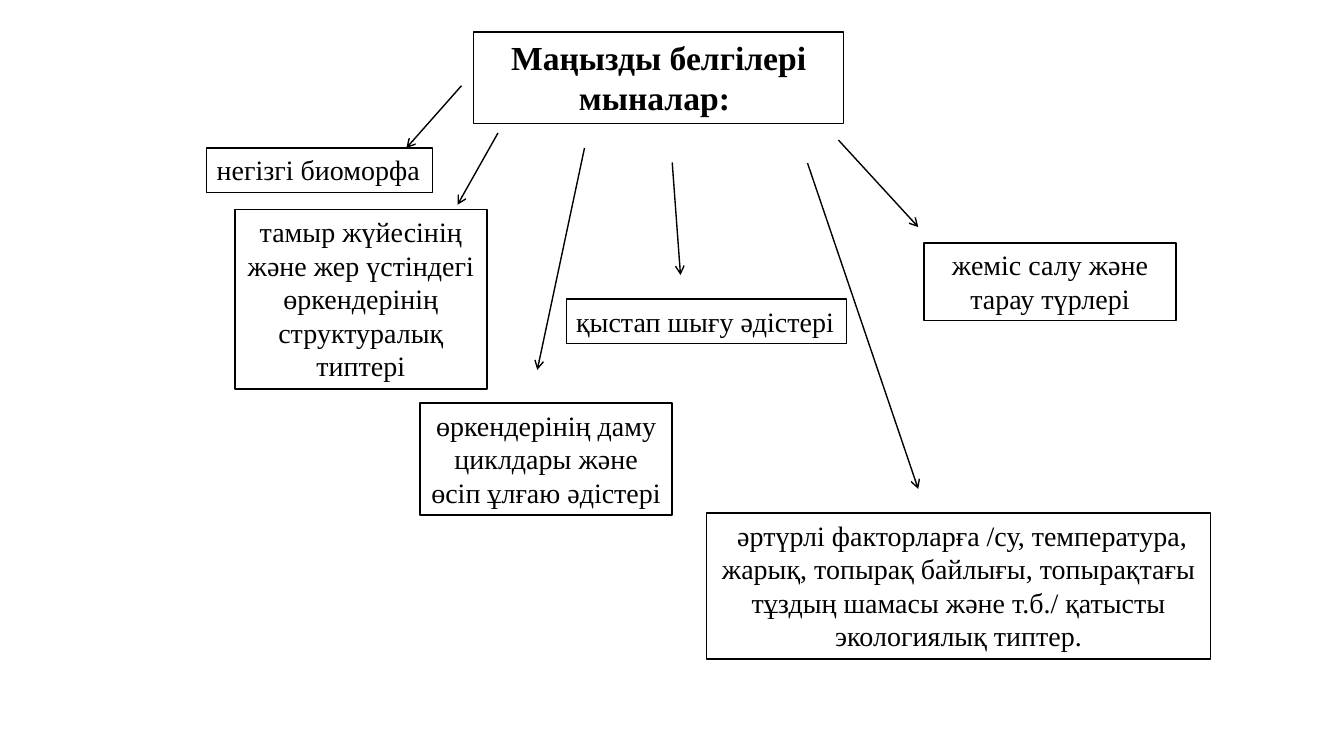
from dataclasses import dataclass

from lxml.etree import SubElement
from pptx import Presentation
from pptx.dml.color import RGBColor
from pptx.enum.shapes import MSO_CONNECTOR as Connector, MSO_SHAPE as Preset
from pptx.enum.text import MSO_ANCHOR as Anchor, MSO_AUTO_SIZE as AutoSize, PP_ALIGN as Align
from pptx.oxml.ns import qn
from pptx.slide import Slide
from pptx.util import Cm, Pt


@dataclass(frozen=True)
class Theme:
    font: str = "Times New Roman"
    ink: RGBColor = RGBColor(0, 0, 0)
    paper: RGBColor = RGBColor(255, 255, 255)
    title_size: Pt = Pt(24)
    trait_size: Pt = Pt(20)
    line_width: Pt = Pt(1)


@dataclass(frozen=True)
class Box:
    text: str
    left: float
    top: float
    width: float
    height: float
    is_title: bool = False
    wraps: bool = True


@dataclass(frozen=True)
class Arrow:
    start: tuple[float, float]
    end: tuple[float, float]


THEME = Theme()
TRAIT_WIDTH = 6.35
LABEL_HEIGHT = 1.12

BOXES = [
    Box(
        " әртүрлі факторларға /су, температура, жарық, топырақ байлығы, "
        "топырақтағы тұздың шамасы және т.б./ қатысты экологиялық типтер.",
        17.81, 12.93, 2 * TRAIT_WIDTH, 3.68,
    ),
    Box("Маңызды белгілері мыналар: ", 11.94, 0.81, 9.32, 2.31, is_title=True),
    Box("негізгі биоморфа", 5.21, 3.73, 5.69, LABEL_HEIGHT, wraps=False),
    Box(
        "тамыр жүйесінің және жер үстіндегі өркендерінің структуралық типтері",
        5.92, 5.28, TRAIT_WIDTH, 4.52,
    ),
    Box(
        "өркендерінің даму циклдары және өсіп ұлғаю әдістері",
        10.59, 10.16, TRAIT_WIDTH, 2.82,
    ),
    Box("қыстап шығу әдістері", 14.27, 7.54, 7.06, LABEL_HEIGHT, wraps=False),
    Box("жеміс салу және тарау түрлері", 23.29, 6.12, TRAIT_WIDTH, 1.96),
]

ARROWS = [
    Arrow((14.73, 3.73), (13.54, 9.32)),
    Arrow((11.63, 2.16), (10.24, 3.73)),
    Arrow((12.55, 3.35), (11.53, 5.16)),
    Arrow((16.94, 4.09), (17.15, 6.93)),
    Arrow((21.13, 3.53), (23.14, 5.72)),
    Arrow((20.35, 4.11), (23.14, 12.32)),
]


def draw_box(slide: Slide, box: Box) -> None:
    frame = slide.shapes.add_shape(
        Preset.RECTANGLE, Cm(box.left), Cm(box.top), Cm(box.width), Cm(box.height)
    )
    frame.shadow.inherit = False
    frame.fill.solid()
    frame.fill.fore_color.rgb = THEME.paper
    frame.line.color.rgb = THEME.ink
    frame.line.width = THEME.line_width

    body = frame.text_frame
    body.word_wrap = box.wraps
    body.auto_size = AutoSize.SHAPE_TO_FIT_TEXT
    body.vertical_anchor = Anchor.TOP
    wording = body.paragraphs[0]
    wording.text = box.text
    wording.alignment = Align.CENTER if box.wraps else Align.LEFT
    wording.font.name = THEME.font
    wording.font.size = THEME.title_size if box.is_title else THEME.trait_size
    wording.font.bold = box.is_title
    wording.font.color.rgb = THEME.ink


def draw_arrow(slide: Slide, arrow: Arrow) -> None:
    pointer = slide.shapes.add_connector(
        Connector.STRAIGHT, *map(Cm, arrow.start), *map(Cm, arrow.end)
    )
    pointer.line.color.rgb = THEME.ink
    pointer.line.width = THEME.line_width
    SubElement(pointer.line._get_or_add_ln(), qn("a:tailEnd"), type="arrow")
    SubElement(pointer._element.spPr, qn("a:effectLst"))


def main() -> None:
    deck = Presentation()
    deck.slide_width, deck.slide_height = Cm(33.87), Cm(19.05)
    slide = deck.slides.add_slide(deck.slide_layouts[6])
    for box in BOXES:
        draw_box(slide, box)
    for arrow in ARROWS:
        draw_arrow(slide, arrow)
    deck.save("out.pptx")


if __name__ == "__main__":
    main()
